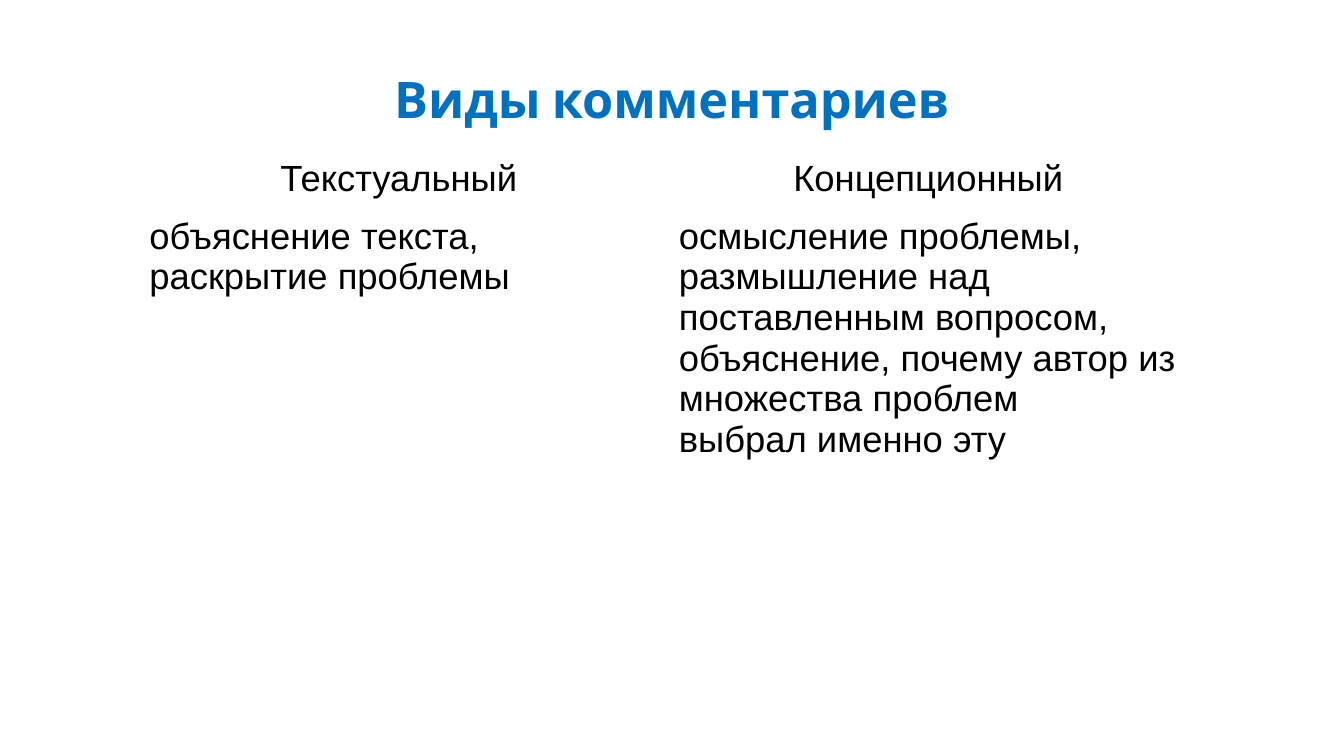
import dataclasses

import pptx
import pptx.dml.color
import pptx.enum.text
import pptx.util

Pt = pptx.util.Pt
RGB = pptx.dml.color.RGBColor
ALIGN = pptx.enum.text.PP_ALIGN
ANCHOR = pptx.enum.text.MSO_ANCHOR


@dataclasses.dataclass(frozen=True)
class Theme:
    title_font: str = "Cabin"
    body_font: str = "Arial"
    title_size: int = 36
    body_size: int = 26
    title_color: RGB = RGB(0x00, 0x70, 0xC0)
    body_color: RGB = RGB(0x00, 0x00, 0x00)


THEME = Theme()
TITLE = "Виды комментариев"
COMMENT_TYPES = [
    ("Текстуальный ", ["объяснение текста, раскрытие проблемы"]),
    ("Концепционный ", [
        "осмысление проблемы, размышление над поставленным вопросом, "
        "объяснение, почему автор из множества проблем",
        "выбрал именно эту",
    ]),
]


def add_plain_table(s, left, top, width, row_heights, column_count):
    table = s.shapes.add_table(len(row_heights), column_count, Pt(left), Pt(top),
                               Pt(width), Pt(sum(row_heights))).table
    table.first_row = False
    table.horz_banding = False
    for row, height in zip(table.rows, row_heights):
        row.height = Pt(height)
    for column in table.columns:
        column.width = Pt(width / column_count)
    return table


def fill_cell(cell, lines, align, anchor, name, size, color, bold=False):
    cell.fill.background()
    cell.vertical_anchor = anchor
    cell.text = "\n".join(lines)
    for p in cell.text_frame.paragraphs:
        p.alignment = align
        p.font.name = name
        p.font.size = Pt(size)
        p.font.color.rgb = color
        p.font.bold = bold


def add_title(s, text, left, top, width, height):
    cell = add_plain_table(s, left, top, width, [height], 1).cell(0, 0)
    fill_cell(cell, [text], ALIGN.CENTER, ANCHOR.TOP, THEME.title_font,
              THEME.title_size, THEME.title_color, bold=True)
    cell.margin_left = cell.margin_right = Pt(5)
    cell.margin_top = cell.margin_bottom = 0
    cell.text_frame.paragraphs[0].line_spacing = 1.06


def add_comparison(s, columns, left, top, width, height, header_height):
    table = add_plain_table(s, left, top, width,
                            [header_height, height - header_height], len(columns))
    body = (THEME.body_font, THEME.body_size, THEME.body_color)
    for i, (heading, lines) in enumerate(columns):
        fill_cell(table.cell(0, i), [heading], ALIGN.CENTER, ANCHOR.MIDDLE, *body)
        fill_cell(table.cell(1, i), lines, ALIGN.LEFT, ANCHOR.TOP, *body)


def main():
    prs = pptx.Presentation()
    prs.slide_width, prs.slide_height = Pt(960), Pt(540)
    s = prs.slides.add_slide(prs.slide_layouts[6])
    add_title(s, TITLE, 99.5, 47.5, 761, 19.5)
    add_comparison(s, COMMENT_TYPES, 99.5, 104.8, 756.5, 271.5, 46)
    prs.save("out.pptx")


if __name__ == "__main__":
    main()
